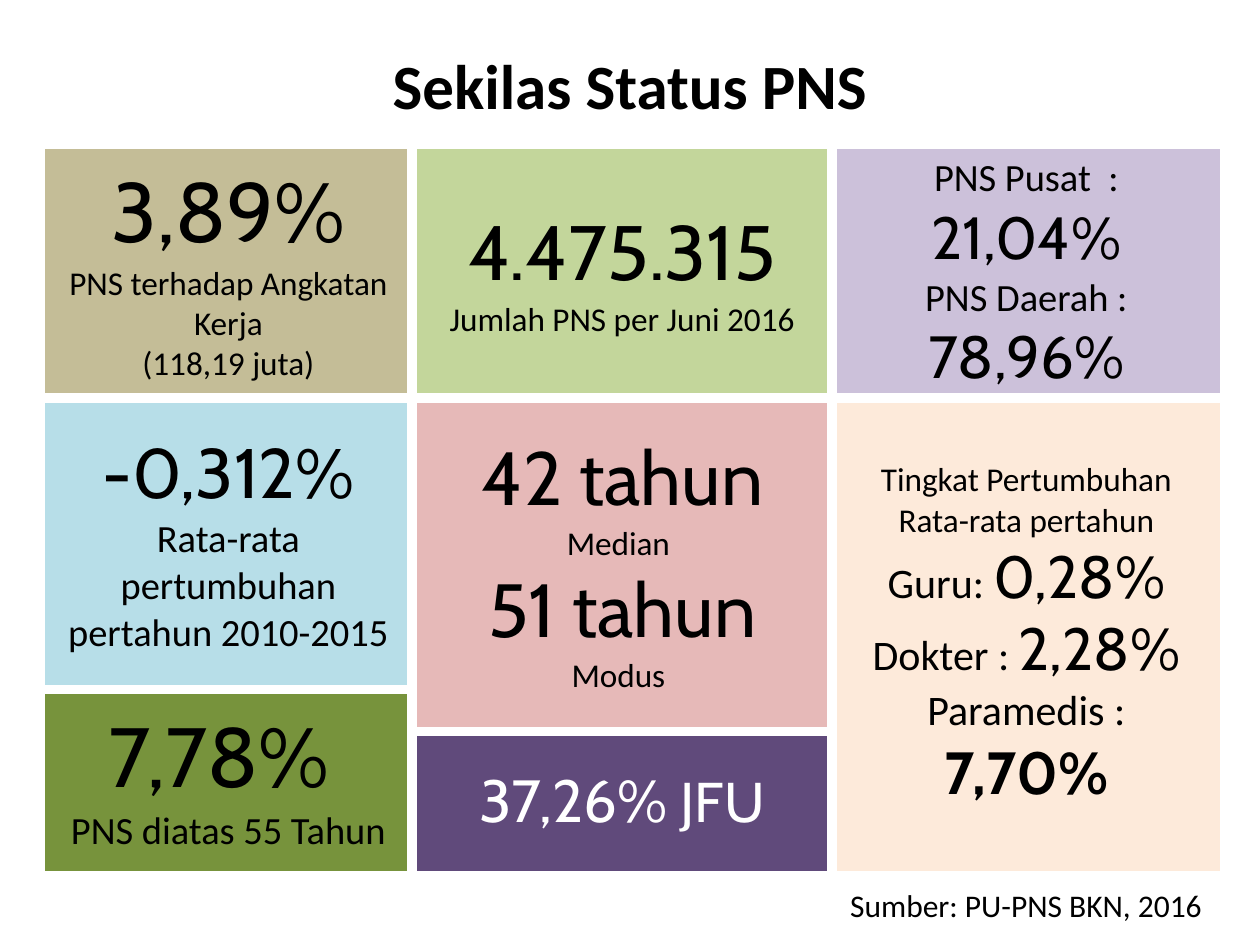
from lxml.etree import SubElement
from pptx import Presentation
from pptx.dml.color import RGBColor
from pptx.enum.text import MSO_ANCHOR as Anchor, PP_ALIGN as Align
from pptx.oxml.ns import qn
from pptx.util import Pt

BLACK = RGBColor(0x00, 0x00, 0x00)
WHITE = RGBColor(0xFF, 0xFF, 0xFF)
TAN = RGBColor(0xC4, 0xBD, 0x97)
LIME = RGBColor(0xC3, 0xD6, 0x9B)
LAVENDER = RGBColor(0xCC, 0xC1, 0xDA)
SKY = RGBColor(0xB7, 0xDE, 0xE8)
ROSE = RGBColor(0xE6, 0xB9, 0xB8)
PEACH = RGBColor(0xFD, 0xEA, 0xDA)
GREEN = RGBColor(0x77, 0x93, 0x3C)
PURPLE = RGBColor(0x60, 0x4A, 0x7B)
LABEL, FIGURE = "Calibri", "Cabin"


def write(frame, lines, color=BLACK, align=Align.CENTER):
    """Fill a text frame; each line is a list of (text, size, font[, bold]) runs."""
    frame.word_wrap = True
    for index, line in enumerate(lines):
        para = frame.paragraphs[0] if index == 0 else frame.add_paragraph()
        para.alignment = align
        for text, size, font, *bold in line:
            span = para.add_run()
            span.text = text
            span.font.size = Pt(size)
            span.font.name = font
            span.font.bold = bool(bold)
            span.font.color.rgb = color


def add_borders(cell, sides):
    """Draw thick white lines on the given sides, in the order L, R, T, B."""
    properties = cell._tc.get_or_add_tcPr()
    for side in sides:
        line = SubElement(properties, qn(f"a:ln{side}"), w=str(Pt(6)))
        fill = SubElement(line, qn("a:solidFill"))
        SubElement(fill, qn("a:srgbClr"), val=str(WHITE))


deck = Presentation()
deck.slide_width, deck.slide_height = Pt(720), Pt(540)
page = deck.slides.add_slide(deck.slide_layouts[6])

title = page.shapes.add_textbox(Pt(36), Pt(21), Pt(648), Pt(54))
title.text_frame.vertical_anchor = Anchor.MIDDLE
write(title.text_frame, [[("Sekilas Status PNS", 36, LABEL, True)]])

column_widths = [210, 240, 222]
row_heights = [141, 166.5, 24, 80]
table = page.shapes.add_table(
    len(row_heights), len(column_widths), Pt(25.5), Pt(84.5),
    Pt(sum(column_widths)), Pt(sum(row_heights))).table
table.first_row = table.horz_banding = False
for column, width in zip(table.columns, column_widths):
    column.width = Pt(width)
for row, height in zip(table.rows, row_heights):
    row.height = Pt(height)

# row, column, rows spanned, fill, text colour, lines
tiles = [
    (0, 0, 1, TAN, BLACK, [
        [("3,89%", 48, FIGURE)],
        [("PNS terhadap Angkatan Kerja", 19, LABEL)],
        [("(118,19 juta)", 19, LABEL)]]),
    (0, 1, 1, LIME, BLACK, [
        [("4.475.315", 44, FIGURE)],
        [("Jumlah PNS per Juni 2016", 19, LABEL)]]),
    (0, 2, 1, LAVENDER, BLACK, [
        [("PNS Pusat  : ", 22, LABEL), ("21,04%", 34, FIGURE)],
        [("PNS Daerah : ", 22, LABEL), ("78,96%", 34, FIGURE)]]),
    (1, 0, 1, SKY, BLACK, [
        [("-0,312%", 40, FIGURE)],
        [("Rata-rata pertumbuhan pertahun 2010-2015", 22, LABEL)]]),
    (1, 1, 2, ROSE, BLACK, [
        [("42 tahun", 43, FIGURE)],
        [("Median ", 19, LABEL)],
        [("51 tahun", 43, FIGURE)],
        [("Modus ", 19, LABEL)]]),
    (1, 2, 3, PEACH, BLACK, [
        [("Tingkat Pertumbuhan Rata-rata pertahun", 19, LABEL)],
        [("Guru: ", 24, LABEL), ("0,28%", 34, FIGURE)],
        [("Dokter : ", 24, LABEL), ("2,28%", 34, FIGURE)],
        [("Paramedis : ", 24, LABEL), ("7,70%", 34, FIGURE, True)]]),
    (2, 0, 2, GREEN, BLACK, [
        [("7,78% ", 48, FIGURE)],
        [("PNS diatas 55 Tahun", 22, LABEL)]]),
    (3, 1, 1, PURPLE, WHITE, [
        [("37,26% ", 34, FIGURE), ("JFU", 32, FIGURE)]]),
]
for row, column, height, fill, color, lines in tiles:
    cell = table.cell(row, column)
    if height > 1:
        cell.merge(table.cell(row + height - 1, column))
    inner = {"L": column > 0, "R": column < len(column_widths) - 1,
             "T": row > 0, "B": row + height < len(row_heights)}
    add_borders(cell, [side for side, shown in inner.items() if shown])
    cell.fill.solid()
    cell.fill.fore_color.rgb = fill
    cell.vertical_anchor = Anchor.MIDDLE
    cell.margin_left = cell.margin_right = Pt(7.2)
    cell.margin_top = cell.margin_bottom = Pt(4.3)
    write(cell.text_frame, lines, color)

source = page.shapes.add_textbox(Pt(439), Pt(502.5), Pt(255), Pt(29))
write(source.text_frame, [[("Sumber: PU-PNS BKN, 2016", 18, LABEL)]], align=Align.RIGHT)

deck.save("out.pptx")
